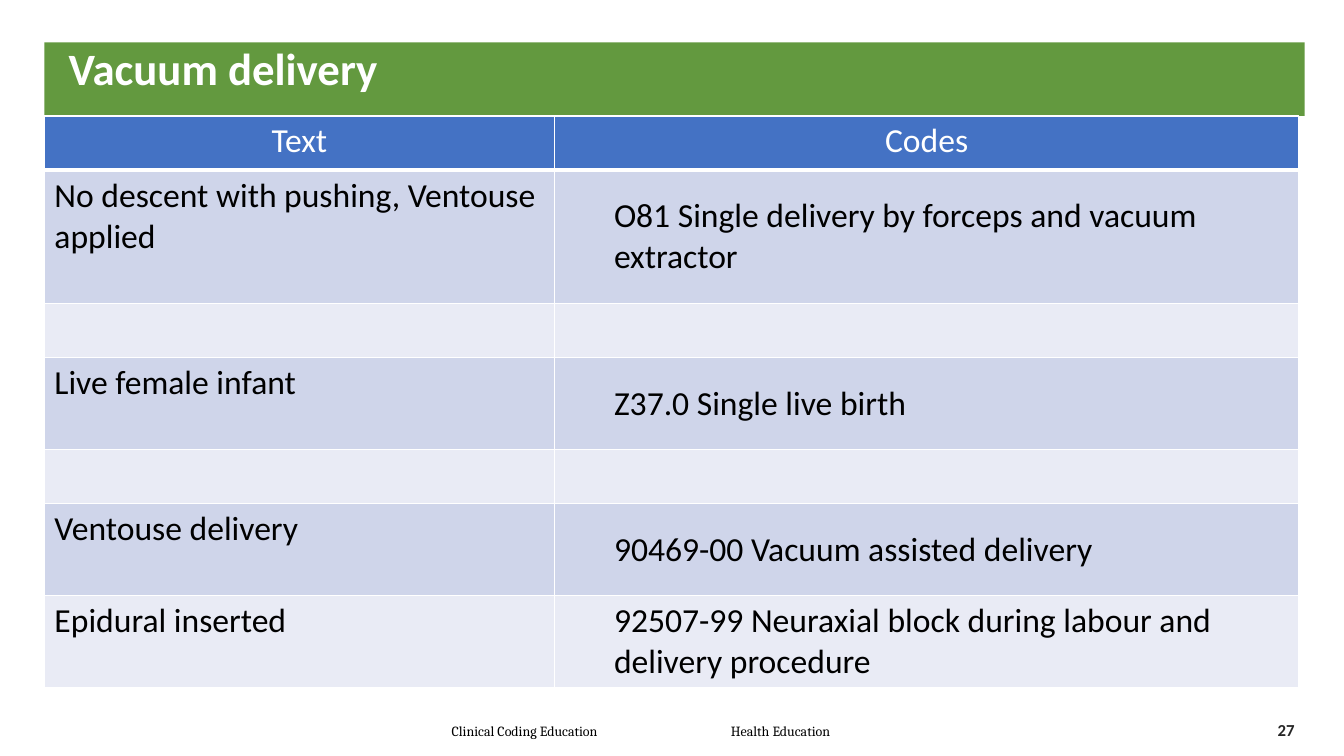
import pptx
import pptx.dml.color
import pptx.enum.shapes
import pptx.enum.text
import pptx.oxml
import pptx.oxml.ns
import pptx.util
from lxml import etree

Inches = pptx.util.Inches
Pt = pptx.util.Pt
RGBColor = pptx.dml.color.RGBColor
Align = pptx.enum.text.PP_ALIGN
Anchor = pptx.enum.text.MSO_ANCHOR
qn = pptx.oxml.ns.qn

WHITE = RGBColor(0xFF, 0xFF, 0xFF)
BLACK = RGBColor(0x00, 0x00, 0x00)
DARK_GREY = RGBColor(0x26, 0x26, 0x26)
GREEN = RGBColor(0x63, 0x99, 0x3F)
HEADER_BLUE = RGBColor(0x44, 0x72, 0xC4)
BANDS = (RGBColor(0xCF, 0xD5, 0xEA), RGBColor(0xE9, 0xEB, 0xF5))

COLUMN_WIDTHS = (5.06, 7.38)
ROW_HEIGHTS = (0.54, 1.32, 0.54, 0.91, 0.54, 0.91, 0.91)
HEADINGS = ("Text", "Codes")
# Text, code, vertical anchor of the code
CODING_ROWS = (
    ("No descent with pushing, Ventouse applied",
     "O81 Single delivery by forceps and vacuum extractor", Anchor.MIDDLE),
    ("", "", Anchor.TOP),
    ("Live female infant", "Z37.0 Single live birth", Anchor.MIDDLE),
    ("", "", Anchor.TOP),
    ("Ventouse delivery", "90469-00 Vacuum assisted delivery", Anchor.MIDDLE),
    ("Epidural inserted",
     "92507-99 Neuraxial block during labour and delivery procedure", Anchor.TOP),
)


def write_text(frame, text, size=24, color=BLACK, font="Calibri", bold=False,
               align=Align.LEFT, anchor=Anchor.TOP, left=0.1, spacing=None, tab=None):
    frame.word_wrap = True
    frame.vertical_anchor = anchor
    frame.margin_left = Inches(left)
    paragraph = frame.paragraphs[0]
    paragraph.text = text
    paragraph.alignment = align
    if spacing:
        paragraph.line_spacing = spacing
    if tab:
        properties = paragraph._p.get_or_add_pPr()
        tabs = etree.SubElement(properties, qn("a:tabLst"))
        etree.SubElement(tabs, qn("a:tab"), pos=str(Inches(tab)), algn="l")
    paragraph.font.name = font
    paragraph.font.size = Pt(size)
    paragraph.font.bold = bold
    paragraph.font.color.rgb = color


class CodingSlide:
    def __init__(self, presentation):
        self.slide = presentation.slides.add_slide(presentation.slide_layouts[6])

    def text_box(self, box, text, **style):
        shape = self.slide.shapes.add_textbox(*map(Inches, box))
        write_text(shape.text_frame, text, **style)

    def banner(self, box, text, fill, **style):
        shape = self.slide.shapes.add_shape(
            pptx.enum.shapes.MSO_SHAPE.RECTANGLE, *map(Inches, box))
        shape.shadow.inherit = False
        shape.fill.solid()
        shape.fill.fore_color.rgb = fill
        shape.line.fill.background()
        write_text(shape.text_frame, text, **style)

    def cell(self, cell, text, fill, bottom=1, **style):
        # The text frame of a cell has no anchor or inset of its own
        cell.vertical_anchor = style.pop("anchor", Anchor.TOP)
        cell.margin_left = Inches(style.pop("left", 0.1))
        write_text(cell.text_frame, text, **style)
        properties = cell._tc.get_or_add_tcPr()
        for side, width in (("lnL", 1), ("lnR", 1), ("lnT", 1), ("lnB", bottom)):
            line = etree.SubElement(properties, qn("a:" + side), w=str(Pt(width)))
            solid = etree.SubElement(line, qn("a:solidFill"))
            etree.SubElement(solid, qn("a:srgbClr"), val=str(WHITE))
        cell.fill.solid()
        cell.fill.fore_color.rgb = fill

    def coding_table(self, left, top):
        table = self.slide.shapes.add_table(
            len(ROW_HEIGHTS), len(COLUMN_WIDTHS), Inches(left), Inches(top),
            Inches(sum(COLUMN_WIDTHS)), Inches(sum(ROW_HEIGHTS))).table
        for column, width in zip(table.columns, COLUMN_WIDTHS):
            column.width = Inches(width)
        for row, height in zip(table.rows, ROW_HEIGHTS):
            row.height = Inches(height)
        for index, heading in enumerate(HEADINGS):
            self.cell(table.cell(0, index), heading, HEADER_BLUE, bottom=3,
                      color=WHITE, align=Align.CENTER)
        for index, (text, code, anchor) in enumerate(CODING_ROWS):
            fill = BANDS[index % 2]
            self.cell(table.cell(index + 1, 0), text, fill)
            self.cell(table.cell(index + 1, 1), code, fill, anchor=anchor, left=0.59)


def main():
    presentation = pptx.Presentation()
    presentation.slide_width = Inches(13.33)
    presentation.slide_height = Inches(7.5)
    page = CodingSlide(presentation)

    # Footer
    page.text_box((4.15, 7.09, 4.75, 0.33), "Clinical Coding Education\tHealth Education",
                  size=10, font="Cambria", anchor=Anchor.MIDDLE, left=0.33, tab=2.77)

    # Title banner
    page.banner((0.44, 0.42, 12.5, 0.73), "Vacuum delivery", GREEN,
                size=32, color=WHITE, bold=True, left=0.24, spacing=0.9)

    # Slide number
    page.text_box((11.5, 7.08, 1.44, 0.33), "27", size=12, color=DARK_GREY,
                  bold=True, align=Align.RIGHT, anchor=Anchor.MIDDLE)

    # Coding table
    page.coding_table(0.44, 1.15)

    presentation.save("out.pptx")


if __name__ == "__main__":
    main()
